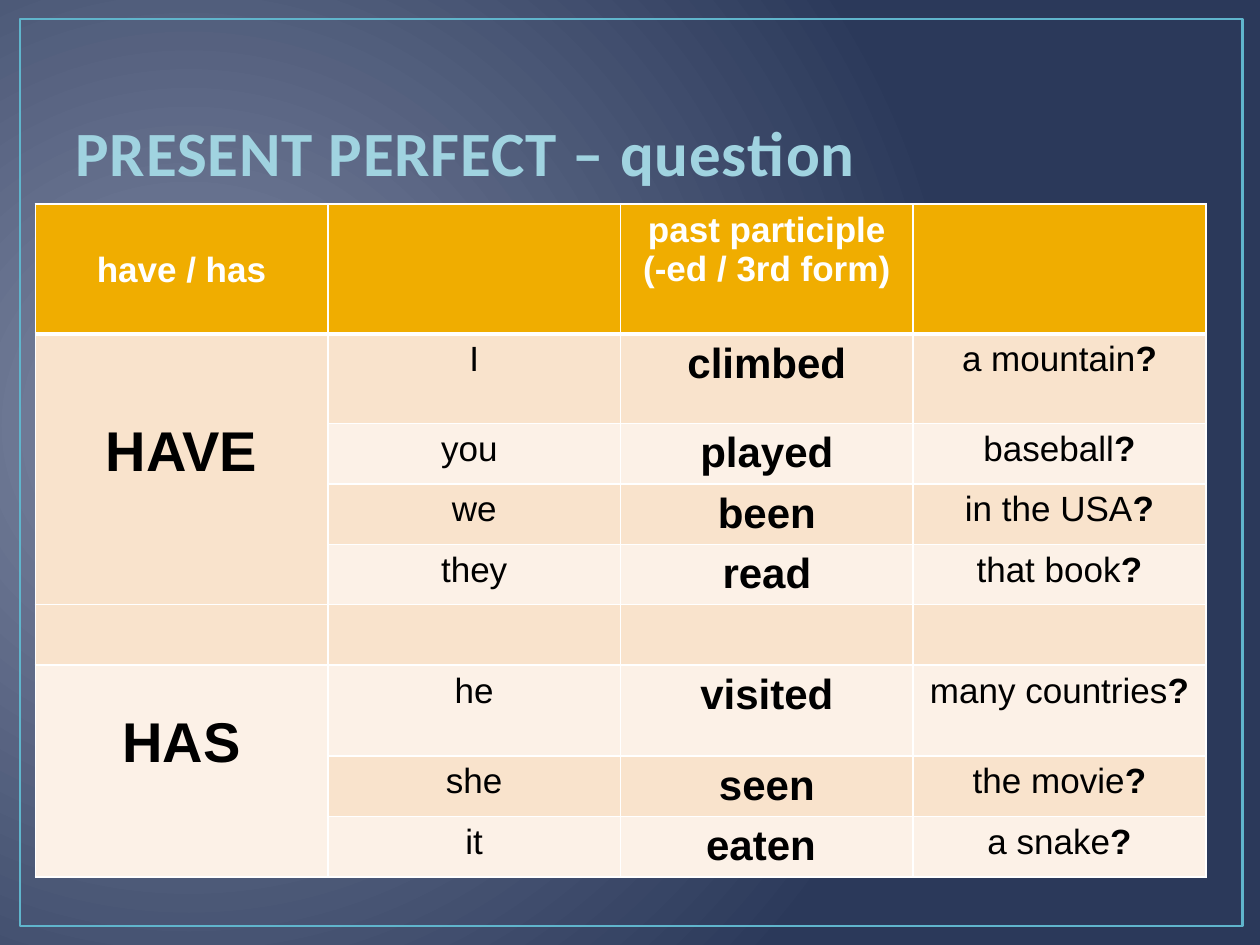
from lxml.etree import SubElement
from pptx import Presentation
from pptx.dml.color import RGBColor
from pptx.enum.shapes import MSO_SHAPE
from pptx.enum.text import MSO_ANCHOR, PP_ALIGN
from pptx.oxml import parse_xml
from pptx.oxml.ns import nsdecls, qn
from pptx.util import Inches, Pt

ROWS = [
    ("I", "climbed", "a mountain"),
    ("you ", "played", "baseball"),
    ("we", "been", "in the USA"),
    ("they", "read", "that book"),
    None,
    ("he", "visited", "many countries"),
    ("she", "seen", "the movie"),
    ("it", "eaten ", "a snake"),
]
HIGH = [1.03, 0.71, 0.48, 0.48, 0.48, 0.48, 0.72, 0.48, 0.48]


def tint(code):
    """Turn a hex string into a colour."""
    return RGBColor.from_string(code)


def line(tag, code, width):
    """Make a line element with a solid colour."""
    return parse_xml(
        f'<a:{tag} {nsdecls("a")} w="{Pt(width)}"><a:solidFill>'
        f'<a:srgbClr val="{code}"/></a:solidFill></a:{tag}>')


def write(para, text, size=20, font="Arial", color="000000", bold=False,
          align=PP_ALIGN.CENTER):
    """Add a formatted run to a paragraph."""
    para.alignment = align
    run = para.add_run()
    run.text = text
    run.font.size, run.font.name, run.font.bold = Pt(size), font, bold
    run.font.color.rgb = tint(color)
    return run


class Deck:
    """Holds the style and the current slide."""
    head, dark, pale = "F0AD00", "F9E3CC", "FCF1E7"
    white, edge, title_ink = "FFFFFF", "60B5CC", "A0D3E0"

    def __init__(self):
        """Start a deck with one title-only slide."""
        self.deck = Presentation()
        self.deck.slide_width, self.deck.slide_height = Inches(10), Inches(7.5)
        self.slide = self.deck.slides.add_slide(self.deck.slide_layouts[5])

    def glow(self, inner, outer):
        """Fill the background with a round gradient."""
        fill = self.slide.background.fill
        fill.gradient()
        for stop, code, place in zip(fill.gradient_stops, (inner, outer), (0, 1)):
            stop.color.rgb, stop.position = tint(code), place
        grad = next(self.slide.element.iter(qn("a:gradFill")))
        grad.remove(grad.find(qn("a:lin")))
        ring = SubElement(grad, qn("a:path"), path="circle")
        SubElement(ring, qn("a:fillToRect"), l="15000", t="50000", r="85000", b="60000")

    def frame(self, left, top, width, height):
        """Draw the outline around the slide."""
        box = self.slide.shapes.add_shape(
            MSO_SHAPE.RECTANGLE, Inches(left), Inches(top), Inches(width), Inches(height))
        box.shadow.inherit = False
        box.fill.background()
        box.line.color.rgb, box.line.width = tint(self.edge), Pt(1.5)

    def title(self, text):
        """Place and write the title."""
        box = self.slide.shapes.title
        box.left, box.top = Inches(0.5), Inches(0.3)
        box.width, box.height = Inches(9), Inches(1.25)
        box.text_frame.vertical_anchor = MSO_ANCHOR.BOTTOM
        run = write(box.text_frame.paragraphs[0], text, size=36, font="Calibri",
                    color=self.title_ink, bold=True, align=PP_ALIGN.LEFT)
        props = run.font._element
        props.set("spc", "50")
        props.insert(0, line("ln", "3792AA", 1.05))

    def cell(self, cell, fill, base=1):
        """Fill a cell and draw its borders."""
        props = cell._tc.get_or_add_tcPr()
        for side in "LRTB":
            props.append(line("ln" + side, self.white, base if side == "B" else 1))
        cell.fill.solid()
        cell.fill.fore_color.rgb = tint(fill)

    def label(self, cell, text, drop, **style):
        """Write bold text lowered inside a cell."""
        cell.margin_top = Inches(drop)
        write(cell.text_frame.paragraphs[0], text, bold=True, **style)

    def table(self, left, top, width):
        """Build the grammar table."""
        grid = self.slide.shapes.add_table(
            len(HIGH), 4, Inches(left), Inches(top), Inches(width), Inches(sum(HIGH))).table
        for row, high in zip(grid.rows, HIGH):
            row.height = Inches(high)
        for col in range(4):
            self.cell(grid.cell(0, col), self.head, base=3)
            for row in range(1, len(HIGH)):
                self.cell(grid.cell(row, col), self.dark if row % 2 else self.pale)
        self.label(grid.cell(0, 0), "have / has", 0.37, color=self.white)
        frame = grid.cell(0, 2).text_frame
        write(frame.paragraphs[0], "past participle", color=self.white, bold=True)
        write(frame.add_paragraph(), "(-ed / 3rd form)", color=self.white, bold=True)
        for first, last, text, drop in ((1, 4, "HAVE", 0.69), (6, 8, "HAS", 0.37)):
            grid.cell(first, 0).merge(grid.cell(last, 0))
            self.label(grid.cell(first, 0), text, drop, size=32)
        for row, words in enumerate(ROWS, 1):
            if words:
                who, verb, thing = (
                    grid.cell(row, col).text_frame.paragraphs[0] for col in (1, 2, 3))
                write(who, words[0])
                write(verb, words[1], size=24, bold=True)
                write(thing, words[2])
                write(thing, "?", bold=True)


def main():
    """Build and save the slide."""
    deck = Deck()
    deck.glow("7E88A3", "2B395A")
    deck.frame(0.16, 0.15, 9.7, 7.2)
    deck.title("PRESENT PERFECT – question")
    deck.table(0.28, 1.62, 9.29)
    deck.deck.save("out.pptx")


if __name__ == "__main__":
    main()
